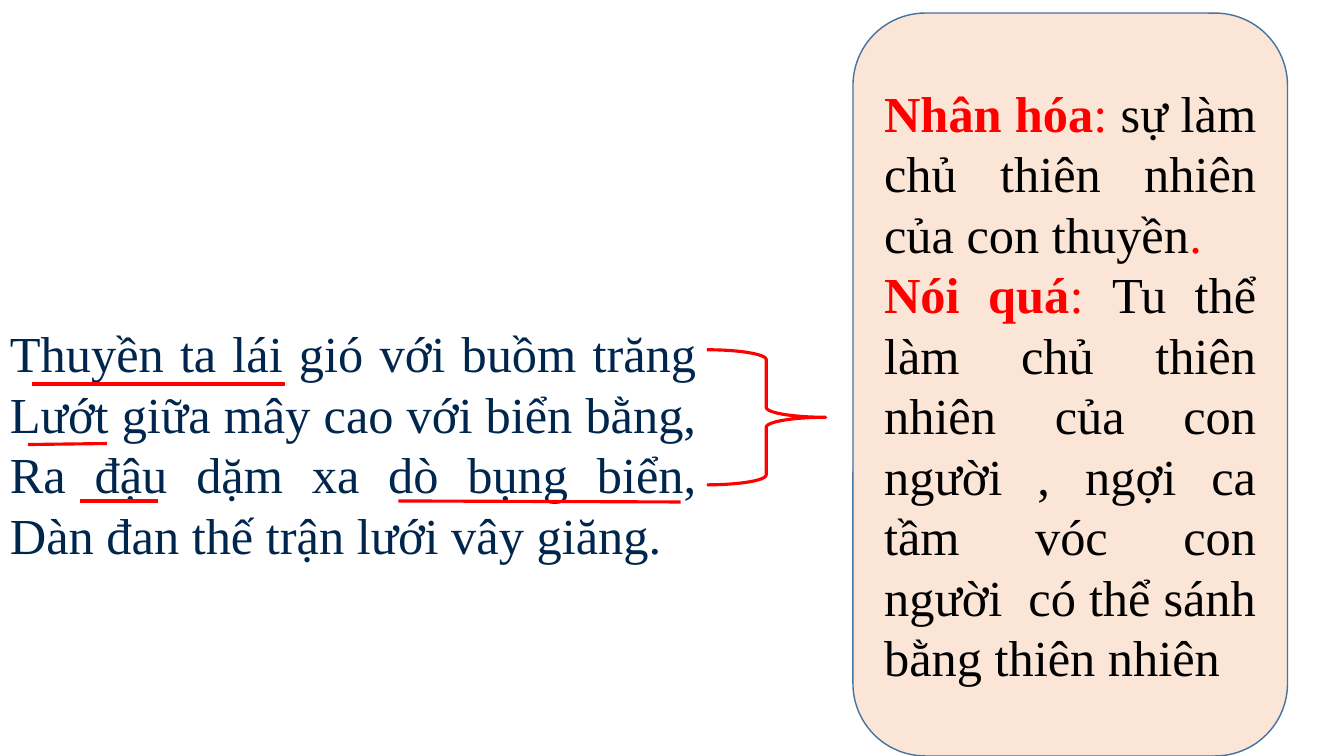
import pptx
import pptx.dml.color
import pptx.enum.shapes
import pptx.enum.text
import pptx.oxml.ns
import pptx.util
from lxml import etree

RED = pptx.dml.color.RGBColor(0xFF, 0x00, 0x00)
NAVY = pptx.dml.color.RGBColor(0x00, 0x26, 0x4D)
BLACK = pptx.dml.color.RGBColor(0x00, 0x00, 0x00)
PEACH = pptx.dml.color.RGBColor(0xFB, 0xE5, 0xD6)
STEEL = pptx.dml.color.RGBColor(0x43, 0x73, 0x9E)

PX_PER_INCH = 100
FONT_FORMAT = {"name": "Times New Roman", "size": pptx.util.Pt(36)}

VERSES = [
    "Thuyền ta lái gió với buồm trăng",
    "Lướt giữa mây cao với biển bằng,",
    "Ra đậu dặm xa dò bụng biển,",
    "Dàn đan thế trận lưới vây giăng.",
]
UNDERLINES = [
    (32, 66, 283, 66),
    (28, 126, 106, 125),
    (395, 182, 675, 183),
    (79, 182, 157, 182),
]
DEVICES = [
    [("Nhân hóa", RED, True), (": ", RED, False),
     ("sự làm chủ thiên nhiên của con thuyền", BLACK, False), (". ", RED, False)],
    [("Nói quá", RED, True), (": ", RED, False),
     ("Tu thể làm chủ thiên nhiên của con người , ngợi ca tầm vóc con người  "
      "có thể sánh bằng thiên nhiên", BLACK, False)],
]


def px(*lengths):
    """Turn px lengths into EMU."""
    return [pptx.util.Inches(length / PX_PER_INCH) for length in lengths]


def format_run(run, color, bold=False):
    """Apply the slide's font, a colour and a weight to a run."""
    for attribute, value in {**FONT_FORMAT, "bold": bold}.items():
        setattr(run.font, attribute, value)
    run.font.color.rgb = color


def outline(shape, color, width):
    """Set the line colour and width in points."""
    shape.line.color.rgb = color
    shape.line.width = pptx.util.Pt(width)


def add_stanza(slide, left, top, width, height):
    """Place the verses and the red underlines of key words."""
    stanza = slide.shapes.add_textbox(*px(left, top, width, height))
    stanza.text_frame.word_wrap = True
    lines = stanza.text_frame.paragraphs[0]
    lines.alignment = pptx.enum.text.PP_ALIGN.JUSTIFY
    lines.text = "\v".join(VERSES)
    for verse in lines.runs:
        format_run(verse, NAVY)
    for x1, y1, x2, y2 in UNDERLINES:
        underline = slide.shapes.add_connector(
            pptx.enum.shapes.MSO_CONNECTOR.STRAIGHT,
            *px(left + x1, top + y1, left + x2, top + y2))
        outline(underline, RED, 2.25)
        etree.SubElement(underline._element.spPr, pptx.oxml.ns.qn("a:effectLst"))


def add_brace(slide, left, top, width, height):
    """Place the brace that joins the stanza to its analysis."""
    brace = slide.shapes.add_shape(
        pptx.enum.shapes.MSO_SHAPE.RIGHT_BRACE, *px(left, top, width, height))
    brace.shadow.inherit = False
    brace.fill.background()
    outline(brace, RED, 2.25)


def add_analysis(slide, left, top, width, height):
    """Place the rounded panel explaining the two literary devices."""
    panel = slide.shapes.add_shape(
        pptx.enum.shapes.MSO_SHAPE.ROUNDED_RECTANGLE, *px(left, top, width, height))
    panel.shadow.inherit = False
    panel.fill.solid()
    panel.fill.fore_color.rgb = PEACH
    outline(panel, STEEL, 1)
    frame = panel.text_frame
    frame.word_wrap = True
    frame.vertical_anchor = pptx.enum.text.MSO_ANCHOR.MIDDLE
    for index, device in enumerate(DEVICES):
        explanation = frame.add_paragraph() if index else frame.paragraphs[0]
        explanation.alignment = pptx.enum.text.PP_ALIGN.JUSTIFY
        for words, color, bold in device:
            run = explanation.add_run()
            run.text = words
            format_run(run, color, bold)


def main():
    """Build and save the slide."""
    deck = pptx.Presentation()
    deck.slide_width, deck.slide_height = px(1333, 750)
    slide = deck.slides.add_slide(deck.slide_layouts[6])
    add_stanza(slide, 0, 315, 701, 252)
    add_brace(slide, 701, 347, 118, 134)
    add_analysis(slide, 846, 13, 431, 737)
    deck.save("out.pptx")


if __name__ == "__main__":
    main()
